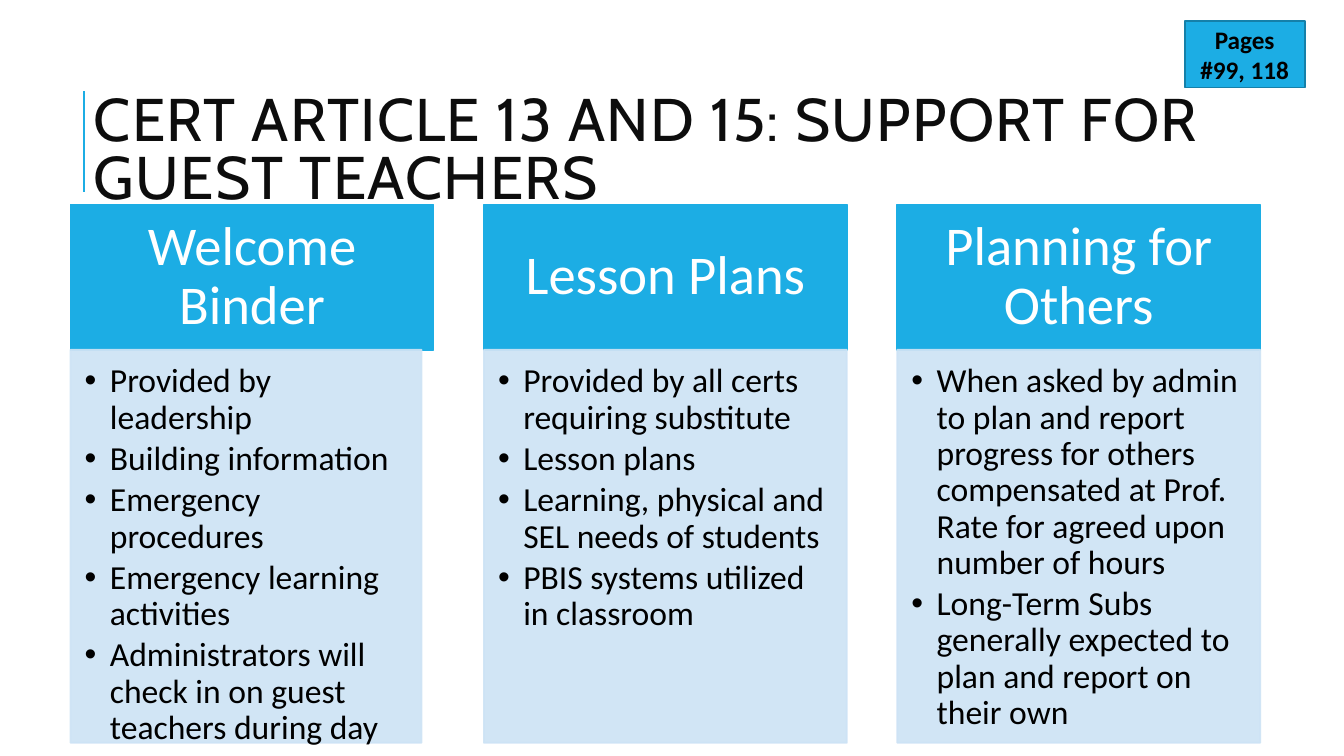
"""Build the slide on support for guest teachers."""
from dataclasses import dataclass

from lxml.etree import SubElement
from pptx import Presentation
from pptx.dml.color import RGBColor
from pptx.enum.shapes import MSO_CONNECTOR, MSO_SHAPE
from pptx.enum.text import MSO_ANCHOR, MSO_AUTO_SIZE, PP_ALIGN
from pptx.oxml.ns import qn
from pptx.util import Inches, Pt

TITLE = "CERT ARTICLE 13 AND 15: SUPPORT FOR GUEST TEACHERS"
PAGES = "Pages #99, 118"
TOPICS = [
    ("Welcome Binder", 3.48, [
        "Provided by leadership",
        "Building information",
        "Emergency procedures",
        "Emergency learning activities",
        "Administrators will check in on guest teachers during day",
    ]),
    ("Lesson Plans", 3.6, [
        "Provided by all certs requiring substitute",
        "Lesson plans",
        "Learning, physical and SEL needs of students",
        "PBIS systems utilized in classroom",
    ]),
    ("Planning for Others", 3.6, [
        "When asked by admin to plan and report progress for others "
        "compensated at Prof. Rate for agreed upon number of hours",
        "Long-Term Subs generally expected to plan and report on their own",
    ]),
]


@dataclass(frozen=True)
class Theme:
    accent: str = "1CADE4"
    accent_dark: str = "1580A9"
    pale: str = "CDE3F5"
    ink: str = "000000"
    title_ink: str = "0D0D0D"
    white: str = "FFFFFF"
    title_font: str = "Cabin"
    body_font: str = "Calibri"
    title_size: float = 43
    heading_size: float = 39
    list_size: float = 24
    pages_size: float = 18
    outline: float = 1.25


THEME = Theme()
COLUMN_LEFT, COLUMN_STEP, COLUMN_WIDTH = 0.7, 4.1, 3.6
HEADING_TOP, HEADING_HEIGHT, LIST_HEIGHT = 2.03, 1.44, 3.9
HEADING_INSETS = (0.3, 0.17, 0.3, 0.17)
LIST_INSETS = (0.14, 0.14, 0.19, 0.21)
DEFAULT_INSETS = (0.1, 0.05, 0.1, 0.05)


def set_frame(frame, insets, anchor):
    frame.word_wrap = True
    frame.auto_size = MSO_AUTO_SIZE.NONE
    frame.vertical_anchor = anchor
    (frame.margin_left, frame.margin_top,
     frame.margin_right, frame.margin_bottom) = map(Inches, insets)


def write(paragraph, words, size, color, font=THEME.body_font, bold=False,
          align=PP_ALIGN.CENTER, spacing=0.9):
    paragraph.alignment = align
    paragraph.line_spacing = spacing
    run = paragraph.add_run()
    run.text = words
    run.font.name = font
    run.font.size = Pt(size)
    run.font.bold = bold
    run.font.color.rgb = RGBColor.from_string(color)
    return run


def add_box(slide, place, fill, line, insets, anchor=MSO_ANCHOR.MIDDLE):
    box = slide.shapes.add_shape(MSO_SHAPE.RECTANGLE, *map(Inches, place))
    box.shadow.inherit = False
    box.fill.solid()
    box.fill.fore_color.rgb = RGBColor.from_string(fill)
    box.line.color.rgb = RGBColor.from_string(line)
    box.line.width = Pt(THEME.outline)
    set_frame(box.text_frame, insets, anchor)
    return box


def add_bullet(paragraph):
    properties = paragraph._p.get_or_add_pPr()
    properties.set("marL", str(Inches(0.25)))
    properties.set("indent", str(-Inches(0.25)))
    SubElement(properties, qn("a:buFont"), typeface="Arial")
    SubElement(properties, qn("a:buChar"), char="•")


def add_title(slide):
    rule = slide.shapes.add_connector(
        MSO_CONNECTOR.STRAIGHT, *map(Inches, (0.83, 1.9, 0.83, 0.9)))
    rule.line.color.rgb = RGBColor.from_string(THEME.accent)
    rule.line.width = Pt(1.5)
    SubElement(rule._element.spPr, qn("a:effectLst"))

    title = slide.shapes.title
    title.left, title.top, title.width, title.height = map(
        Inches, (0.83, 1.17, 12.26, 0.7))
    set_frame(title.text_frame, DEFAULT_INSETS, MSO_ANCHOR.MIDDLE)
    run = write(title.text_frame.paragraphs[0], TITLE, THEME.title_size,
                THEME.title_ink, THEME.title_font, align=PP_ALIGN.LEFT, spacing=0.8)
    run._r.get_or_add_rPr().set("spc", "100")


def add_topic(slide, left, heading, list_width, points):
    banner = add_box(slide, (left, HEADING_TOP, COLUMN_WIDTH, HEADING_HEIGHT),
                     THEME.accent, THEME.accent, HEADING_INSETS)
    write(banner.text_frame.paragraphs[0], heading, THEME.heading_size, THEME.white)

    panel = add_box(slide, (left, HEADING_TOP + HEADING_HEIGHT, list_width, LIST_HEIGHT),
                    THEME.pale, THEME.pale, LIST_INSETS, MSO_ANCHOR.TOP)
    for color in panel._element.spPr.iter(qn("a:srgbClr")):
        SubElement(color, qn("a:alpha"), val="90000")
    for index, point in enumerate(points):
        frame = panel.text_frame
        paragraph = frame.add_paragraph() if index else frame.paragraphs[0]
        write(paragraph, point, THEME.list_size, THEME.ink, align=PP_ALIGN.LEFT)
        paragraph.space_after = Pt(0.15 * THEME.list_size)
        add_bullet(paragraph)


def main():
    deck = Presentation()
    deck.slide_width, deck.slide_height = Inches(13.33), Inches(7.5)
    slide = deck.slides.add_slide(deck.slide_layouts[5])
    add_title(slide)
    pages = add_box(slide, (11.75, 0.21, 1.19, 0.66),
                    THEME.accent, THEME.accent_dark, DEFAULT_INSETS)
    write(pages.text_frame.paragraphs[0], PAGES, THEME.pages_size, THEME.ink,
          bold=True, spacing=1.0)
    for column, topic in enumerate(TOPICS):
        add_topic(slide, COLUMN_LEFT + column * COLUMN_STEP, *topic)
    deck.save("out.pptx")


if __name__ == "__main__":
    main()
